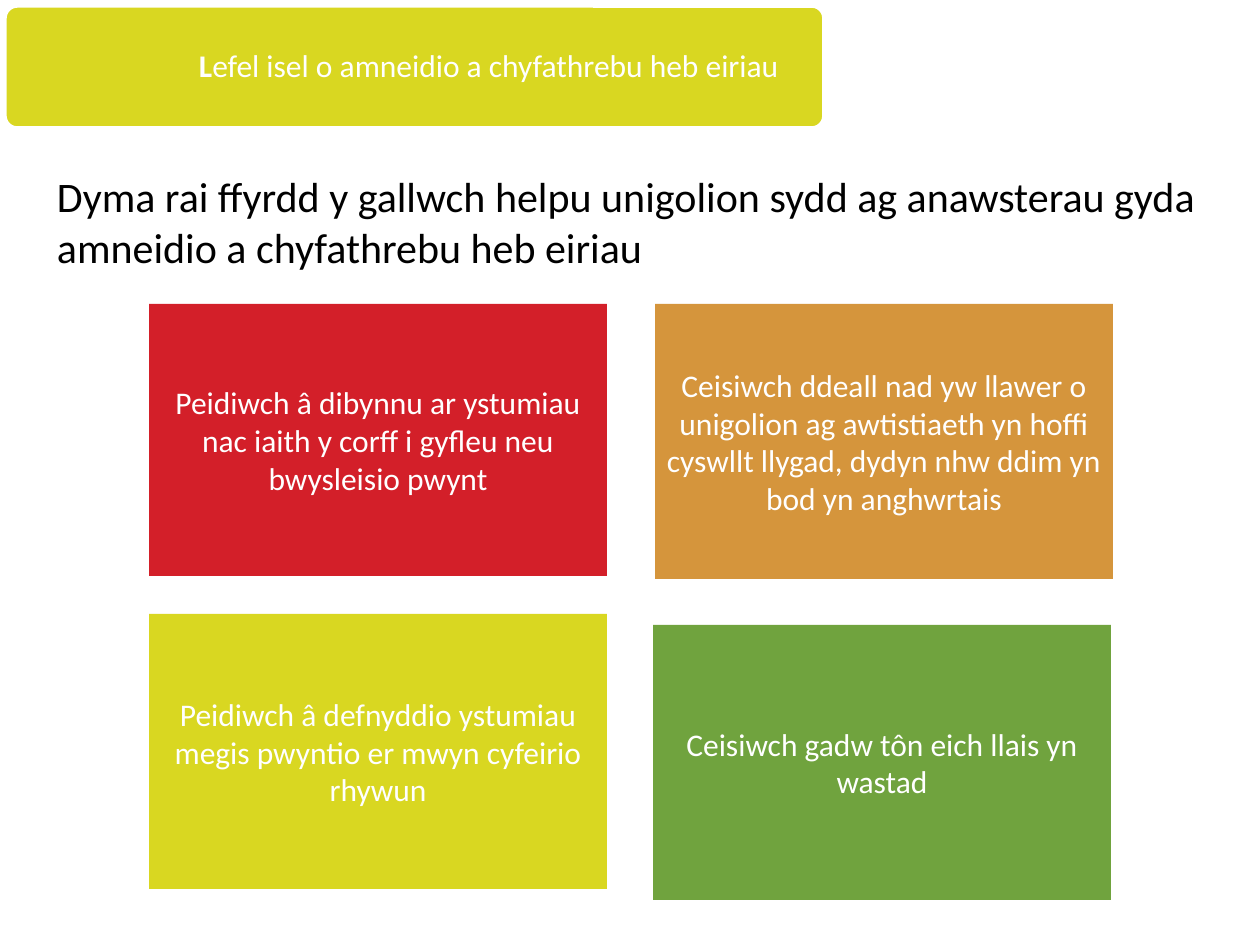
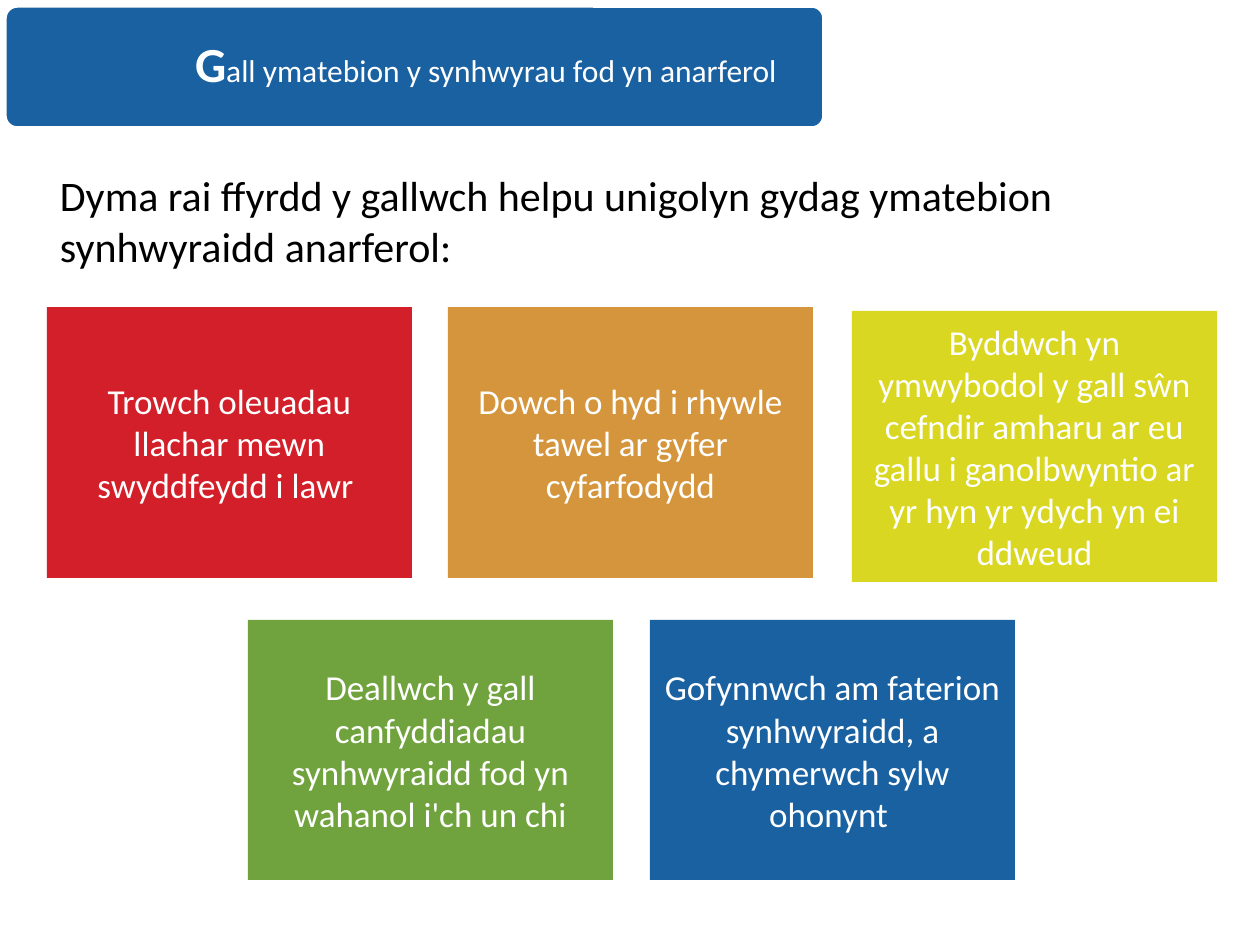
from pptx import Presentation
from pptx.dml.color import RGBColor
from pptx.enum.shapes import MSO_SHAPE
from pptx.enum.text import MSO_ANCHOR, MSO_AUTO_SIZE, PP_ALIGN
from pptx.util import Pt

RECTANGLE, ROUNDED = MSO_SHAPE.RECTANGLE, MSO_SHAPE.ROUNDED_RECTANGLE
MIDDLE, TOP = MSO_ANCHOR.MIDDLE, MSO_ANCHOR.TOP
LEFT, CENTER = PP_ALIGN.LEFT, PP_ALIGN.CENTER
NO_AUTOFIT = MSO_AUTO_SIZE.NONE

EMU_PER_PX = 914400 / 126
FONT = "Calibri"
RED, ORANGE, YELLOW, GREEN, BLUE = "D31F29", "D5953C", "D9D721", "70A33E", "1A61A2"
WHITE, BLACK = "FFFFFF", "000000"
TITLE_ONLY = 5
BAND_BOX = (5, 6, 819, 122)


def px(*lengths):
    return [round(length * EMU_PER_PX) for length in lengths]


def write(shape, runs, color, align, anchor, margins):
    """Fill the shape with one paragraph of (text, size, bold) runs."""
    frame = shape.text_frame
    side, top = px(*margins)
    settings = {"word_wrap": True, "auto_size": NO_AUTOFIT, "vertical_anchor": anchor,
                "margin_left": side, "margin_right": side,
                "margin_top": top, "margin_bottom": top}
    for name, value in settings.items():
        setattr(frame, name, value)
    paragraph = frame.paragraphs[0]
    paragraph.alignment = align
    for text, size, bold in runs:
        run = paragraph.add_run()
        run.text = text
        for name, value in {"name": FONT, "size": Pt(size), "bold": bold}.items():
            setattr(run.font, name, value)
        run.font.color.rgb = RGBColor.from_string(color)
    return paragraph


topics = [
    {
        "band_color": YELLOW,
        "title_box": (184, 10, 645, 115),
        "title": [("L", 18, True), ("efel isel o amneidio a chyfathrebu heb eiriau", 18, False)],
        "intro_box": (44, 165, 1181, 115),
        "intro": "Dyma rai ffyrdd y gallwch helpu unigolion sydd ag anawsterau gyda "
                 "amneidio a chyfathrebu heb eiriau",
        "tip_size": 18,
        "tip_margin": 9,
        "tips": [
            (RED, (149, 304, 458, 272),
             "Peidiwch â dibynnu ar ystumiau nac iaith y corff i gyfleu neu bwysleisio pwynt"),
            (ORANGE, (655, 304, 458, 275),
             "Ceisiwch ddeall nad yw llawer o unigolion ag awtistiaeth yn hoffi cyswllt "
             "llygad, dydyn nhw ddim yn bod yn anghwrtais"),
            (YELLOW, (149, 614, 458, 275),
             "Peidiwch â defnyddio ystumiau megis pwyntio er mwyn cyfeirio rhywun"),
            (GREEN, (653, 625, 458, 275),
             "Ceisiwch gadw tôn eich llais yn wastad"),
        ],
    },
    {
        "band_color": BLUE,
        "title_box": (180, 14, 635, 106),
        "title": [("G", 28, True), ("all ymatebion y synhwyrau fod yn anarferol", 18, False)],
        "intro_box": (47, 164, 1171, 115),
        "intro": "Dyma rai ffyrdd y gallwch helpu unigolyn gydag ymatebion "
                 "synhwyraidd anarferol:",
        "tip_size": 20,
        "tip_margin": 10,
        "tips": [
            (RED, (47, 307, 365, 271), "Trowch oleuadau llachar mewn swyddfeydd i lawr "),
            (ORANGE, (448, 307, 365, 271), "Dowch o hyd i rhywle tawel ar gyfer cyfarfodydd"),
            (YELLOW, (852, 311, 365, 271),
             "Byddwch yn ymwybodol y gall sŵn cefndir amharu ar eu gallu i ganolbwyntio "
             "ar yr hyn yr ydych yn ei ddweud"),
            (GREEN, (248, 620, 365, 260),
             "Deallwch y gall canfyddiadau synhwyraidd fod yn wahanol i'ch un chi"),
            (BLUE, (650, 620, 365, 260),
             "Gofynnwch am faterion synhwyraidd, a chymerwch sylw ohonynt "),
        ],
    },
]

deck = Presentation()
deck.slide_width, deck.slide_height = px(1260, 945)

for topic in topics:
    slide = deck.slides.add_slide(deck.slide_layouts[TITLE_ONLY])

    band = slide.shapes.add_shape(ROUNDED, *px(*BAND_BOX))
    band.adjustments[0] = 0.1
    band.shadow.inherit = False
    band.fill.solid()
    band.fill.fore_color.rgb = RGBColor.from_string(topic["band_color"])
    band.line.color.rgb = RGBColor.from_string(WHITE)
    band.line.width = Pt(2)

    title = slide.shapes.title
    title.left, title.top, title.width, title.height = px(*topic["title_box"])
    heading = write(title, topic["title"], WHITE, LEFT, MIDDLE, (15, 15))
    heading.line_spacing = 0.9
    # The band lies behind the title
    title._element.addprevious(band._element)

    intro = slide.shapes.add_textbox(*px(*topic["intro_box"]))
    write(intro, [(topic["intro"], 24, False)], BLACK, LEFT, TOP, (13, 6))

    for color, box, text in topic["tips"]:
        tip = slide.shapes.add_shape(RECTANGLE, *px(*box))
        tip.shadow.inherit = False
        tip.fill.solid()
        tip.fill.fore_color.rgb = RGBColor.from_string(color)
        tip.line.fill.background()
        write(tip, [(text, topic["tip_size"], False)], WHITE, CENTER, MIDDLE,
              (topic["tip_margin"], topic["tip_margin"]))

deck.save("out.pptx")
